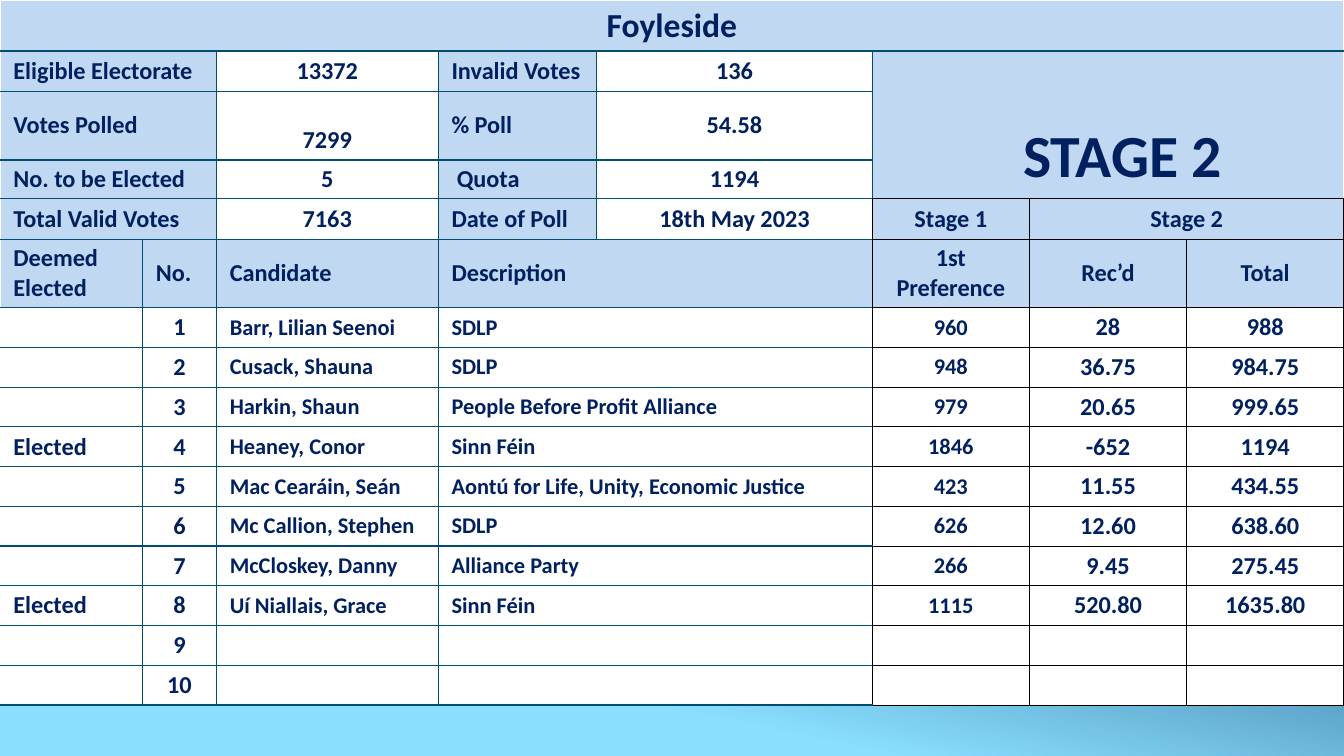
from lxml import etree
from pptx import Presentation
from pptx.dml.color import RGBColor
from pptx.enum.text import MSO_ANCHOR, PP_ALIGN
from pptx.oxml.ns import qn
from pptx.util import Inches, Pt

LEFT, MID = PP_ALIGN.LEFT, PP_ALIGN.CENTER
CENTER, BOTTOM = MSO_ANCHOR.MIDDLE, MSO_ANCHOR.BOTTOM
NAVY, BLUE, WHITE = "002060", "C1D8F2", "FFFFFF"
TEAL, BLACK, PLAIN = ("004E6C", 0.75), ("000000", 0.5), ("FFFFFF", 1)

WIDE = 10
HIGH = WIDE * 9 / 16
WIDTHS = [1.06, 0.55, 1.65, 1.18, 2.05, 1.17, 1.17, 1.17]
TOPS = [0, 0.38, 0.68, 1.19, 1.48, 1.78, 2.29]
BASE = 5.25

FACTS = [
    ("Eligible Electorate", "13372", "Invalid Votes", "136"),
    ("Votes Polled", "7299", "% Poll", "54.58"),
    ("No. to be Elected", "5", "Quota", "1194"),
    ("Total Valid Votes", "7163", "Date of Poll", "18th May 2023"),
]
HEADS = ["Deemed Elected", "No.", "Candidate", "Description",
         "1st Preference", "Rec’d", "Total"]
VOTES = [
    ("", "Barr, Lilian Seenoi", "SDLP", "960", "28", "988"),
    ("", "Cusack, Shauna", "SDLP", "948", "36.75", "984.75"),
    ("", "Harkin, Shaun", "People Before Profit Alliance", "979", "20.65", "999.65"),
    ("Elected", "Heaney, Conor", "Sinn Féin", "1846", "-652", "1194"),
    ("", "Mac Cearáin, Seán", "Aontú for Life, Unity, Economic Justice",
     "423", "11.55", "434.55"),
    ("", "Mc Callion, Stephen", "SDLP", "626", "12.60", "638.60"),
    ("", "McCloskey, Danny", "Alliance Party", "266", "9.45", "275.45"),
    ("Elected", "Uí Niallais, Grace", "Sinn Féin", "1115", "520.80", "1635.80"),
    ("",) * 6,
    ("",) * 6,
]
SLOTS = [0, 1, 2, 3, 5, 6, 7]


def color(code):
    return RGBColor.from_string(code)


class Board:
    def __init__(self, deck):
        self.slide = deck.slides.add_slide(deck.slide_layouts[6])
        self.font = {"name": "Calibri", "bold": True}
        self.inset = {"left": 0.1, "right": 0.1, "top": 0.03, "bottom": 0.03}

    def back(self, stops, angle):
        fill = self.slide.background.fill
        fill.gradient()
        fill.gradient_angle = angle
        for stop, (place, code) in zip(fill.gradient_stops, stops):
            stop.position = place
            stop.color.rgb = color(code)

    def grid(self, widths, tops, base):
        frame = self.slide.shapes.add_table(
            len(tops), len(widths), 0, 0, Inches(sum(widths)), Inches(base))
        self.table = frame.table
        self.table.first_row = self.table.horz_banding = False
        for col, wide in zip(self.table.columns, widths):
            col.width = Inches(wide)
        for row, top, end in zip(self.table.rows, tops, tops[1:] + [base]):
            row.height = Inches(end - top)

    def edge(self, cell, side, line):
        code, wide = line
        node = etree.SubElement(cell._tc.get_or_add_tcPr(), qn("a:ln" + side),
                                w=str(Pt(wide)))
        fill = etree.SubElement(node, qn("a:solidFill"))
        etree.SubElement(fill, qn("a:srgbClr"), val=code)

    def put(self, row, col, text, fill=WHITE, size=13, align=MID,
            span=(1, 1), anchor=CENTER, lines=None, **inset):
        down, over = span
        base = TEAL if col < 5 else BLACK
        sides = dict.fromkeys("LRTB", base) | (lines or {})
        for r in range(row, row + down):
            for c in range(col, col + over):
                cell = self.table.cell(r, c)
                for side, line in sides.items():
                    self.edge(cell, side, line)
                cell.fill.solid()
                cell.fill.fore_color.rgb = color(fill)
        cell = self.table.cell(row, col)
        if span != (1, 1):
            cell.merge(self.table.cell(row + down - 1, col + over - 1))
        cell.vertical_anchor = anchor
        for side, gap in (self.inset | inset).items():
            setattr(cell, "margin_" + side, Inches(gap))
        para = cell.text_frame.paragraphs[0]
        para.alignment = align
        if not text:
            etree.SubElement(para._p, qn("a:endParaRPr"), sz=str(size * 100))
            return
        run = para.add_run()
        run.text = text
        for key, value in (self.font | {"size": Pt(size)}).items():
            setattr(run.font, key, value)
        run.font.color.rgb = color(NAVY)


def main():
    deck = Presentation()
    deck.slide_width, deck.slide_height = Inches(WIDE), Inches(HIGH)
    board = Board(deck)
    board.back([(0.42, "0D3868"), (0.82, "8ADFFF")], 258)
    step = (BASE - TOPS[-1]) / len(VOTES)
    tops = TOPS + [TOPS[-1] + step * i for i in range(1, len(VOTES))]
    board.grid(WIDTHS, tops, BASE)

    board.put(0, 0, "Foyleside", BLUE, 18, span=(1, 8),
              lines={"L": PLAIN, "T": PLAIN, "R": PLAIN})
    for row, (name, count, label, value) in enumerate(FACTS, 1):
        board.put(row, 0, name, BLUE, align=LEFT, span=(1, 2), lines={"L": PLAIN})
        board.put(row, 2, count, top=0.25 if row == 2 else 0.03)
        board.put(row, 3, label, BLUE, align=LEFT, left=0.14 if row == 3 else 0.1)
        board.put(row, 4, value, lines={"R": BLACK} if row == 4 else None)
    board.put(1, 5, "STAGE 2", BLUE, 32, span=(3, 3), anchor=BOTTOM, left=0.32,
              bottom=0.04, lines={"L": TEAL, "T": TEAL, "R": PLAIN})
    board.put(4, 5, "Stage 1", BLUE)
    board.put(4, 6, "Stage 2", BLUE, span=(1, 2))

    rims = {0: {"L": PLAIN}, 3: {"R": BLACK}}
    for col, head in zip(SLOTS, HEADS):
        board.put(5, col, head, BLUE, align=LEFT if col < 5 else MID,
                  span=(1, 2 if col == 3 else 1), lines=rims.get(col))
    for num, (state, *rest) in enumerate(VOTES, 1):
        for col, text in zip(SLOTS, [state, str(num), *rest]):
            board.put(5 + num, col, text, size=12 if col in (2, 3, 5) or not text else 13,
                      align=LEFT if col in (0, 2, 3) else MID,
                      span=(1, 2 if col == 3 else 1), lines=rims.get(col))
    deck.save("out.pptx")


if __name__ == "__main__":
    main()
